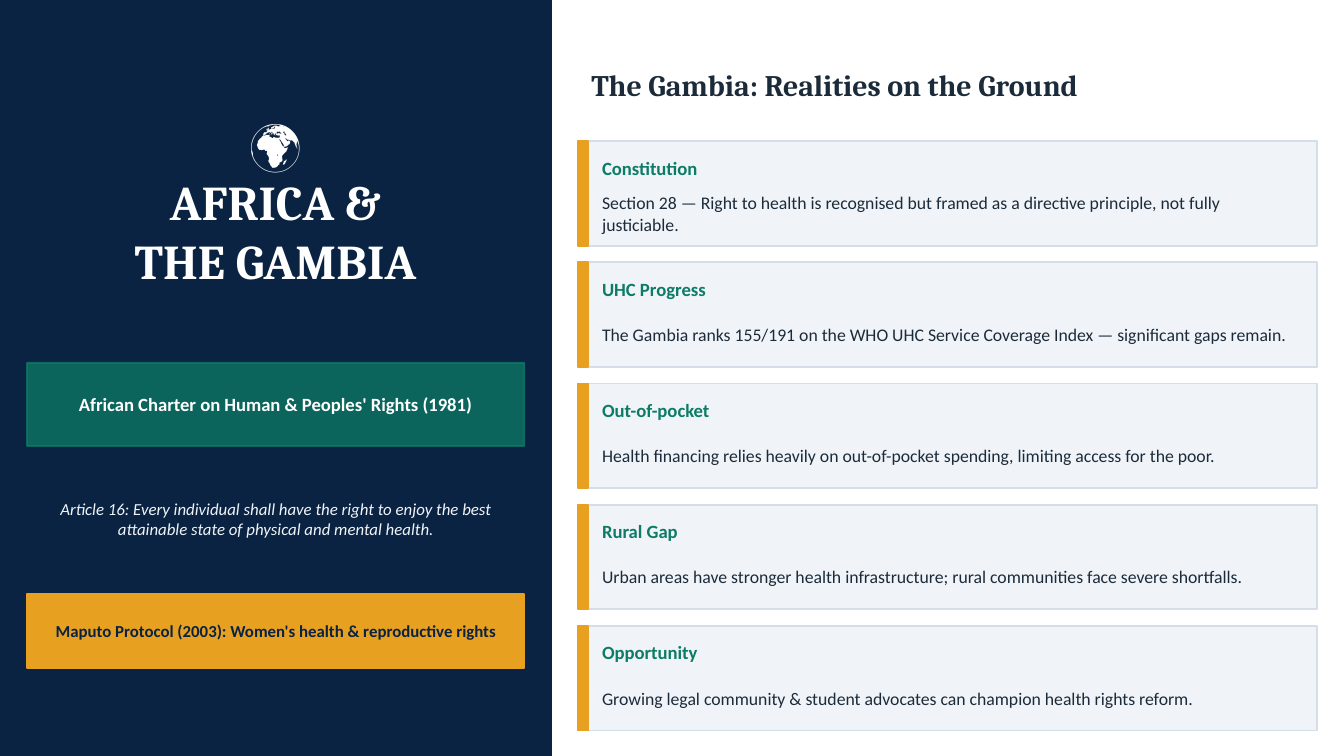
from lxml import etree
from pptx import Presentation
from pptx.dml.color import RGBColor
from pptx.enum.shapes import MSO_SHAPE
from pptx.enum.text import MSO_ANCHOR, MSO_AUTO_SIZE, PP_ALIGN
from pptx.oxml.ns import qn
from pptx.util import Cm, Pt

RECT = MSO_SHAPE.RECTANGLE
MIDDLE = MSO_ANCHOR.MIDDLE
NO_FIT = MSO_AUTO_SIZE.NONE
LEFT, CENTER = PP_ALIGN.LEFT, PP_ALIGN.CENTER

NAVY = RGBColor(0x0A, 0x23, 0x42)
GREEN = RGBColor(0x0D, 0x7C, 0x66)
GOLD = RGBColor(0xE8, 0xA0, 0x20)
PALE = RGBColor(0xF0, 0xF4, 0xF8)
EDGE = RGBColor(0xD4, 0xDD, 0xE8)
INK = RGBColor(0x1C, 0x2B, 0x3A)
WHITE = RGBColor(0xFF, 0xFF, 0xFF)

# Font formats
HERO = {"name": "Cambria", "size": Pt(26), "bold": True}
TITLE = {"name": "Cambria", "size": Pt(16), "bold": True}
HEAD = {"name": "Calibri", "size": Pt(10), "bold": True}
BODY = {"name": "Calibri", "size": Pt(9.5)}
QUOTE = {"name": "Calibri", "size": Pt(9), "italic": True}
NOTE = {"name": "Calibri", "size": Pt(9), "bold": True}

CARDS = [
    ("Constitution", "Section 28 — Right to health is recognised but framed "
     "as a directive principle, not fully justiciable."),
    ("UHC Progress", "The Gambia ranks 155/191 on the WHO UHC Service "
     "Coverage Index — significant gaps remain."),
    ("Out-of-pocket", "Health financing relies heavily on out-of-pocket "
     "spending, limiting access for the poor."),
    ("Rural Gap", "Urban areas have stronger health infrastructure; rural "
     "communities face severe shortfalls."),
    ("Opportunity", "Growing legal community & student advocates can "
     "champion health rights reform."),
]
CARD_X, CARD_TOP, CARD_STEP = 10.92, 2.67, 2.29
CARD_W, CARD_H = 13.97, 1.98


def fade(shape, alpha):
    """Give the fill and line an opacity in percent."""
    for color in shape._element.spPr.iter(qn("a:srgbClr")):
        etree.SubElement(color, qn("a:alpha")).set("val", str(alpha * 1000))


def add_rect(slide, box, fill, line):
    shape = slide.shapes.add_shape(RECT, *map(Cm, box))
    shape.shadow.inherit = False
    shape.fill.solid()
    shape.fill.fore_color.rgb = fill
    shape.line.color.rgb = line
    shape.line.width = Pt(1)
    return shape


def set_text(frame, text, style, color, align):
    frame.text = text
    frame.word_wrap = True
    frame.auto_size = NO_FIT
    frame.vertical_anchor = MIDDLE
    for para in frame.paragraphs:
        para.alignment = align
        for run in para.runs:
            for key, value in style.items():
                setattr(run.font, key, value)
            run.font.color.rgb = color


def add_text(slide, box, text, style, color, align=LEFT, inset=False):
    frame = slide.shapes.add_textbox(*map(Cm, box)).text_frame
    if not inset:
        for side in ("left", "top", "right", "bottom"):
            setattr(frame, f"margin_{side}", 0)
    set_text(frame, text, style, color, align)


def add_title(slide, box, text):
    title = slide.shapes.title
    for key, value in zip(("left", "top", "width", "height"), box):
        setattr(title, key, Cm(value))
    set_text(title.text_frame, text, TITLE, INK, LEFT)


def add_card(slide, top, head, body):
    add_rect(slide, (CARD_X, top, CARD_W, CARD_H), PALE, EDGE)
    add_rect(slide, (CARD_X, top, 0.2, CARD_H), GOLD, GOLD)
    left = CARD_X + 0.46
    add_text(slide, (left, top + 0.15, 3.43, 0.71), head, HEAD, GREEN)
    add_text(slide, (left, top + 0.91, 13.21, 0.91), body, BODY, INK)


def add_panel(slide):
    add_rect(slide, (0, 0, 10.41, 14.29), NAVY, NAVY)
    add_text(slide, (0.51, 1.27, 9.4, 5.08), "🌍\nAFRICA &\nTHE GAMBIA",
             HERO, WHITE, CENTER, inset=True)

    # Charter and its article
    fade(add_rect(slide, (0.51, 6.86, 9.4, 1.57), GREEN, GREEN), 75)
    add_text(slide, (0.76, 6.91, 8.89, 1.47),
             "African Charter on Human & Peoples' Rights (1981)",
             HEAD, WHITE, CENTER)
    add_text(slide, (0.64, 8.69, 9.14, 2.24),
             "Article 16: Every individual shall have the right to enjoy the "
             "best attainable state of physical and mental health.",
             QUOTE, PALE, CENTER, inset=True)

    # Protocol
    add_rect(slide, (0.51, 11.23, 9.4, 1.4), GOLD, GOLD)
    add_text(slide, (0.64, 11.28, 9.14, 1.27),
             "Maputo Protocol (2003): Women's health & reproductive rights",
             NOTE, NAVY, CENTER)


def main():
    deck = Presentation()
    deck.slide_width, deck.slide_height = Cm(25.4), Cm(14.29)
    slide = deck.slides.add_slide(deck.slide_layouts[5])

    # Left panel
    add_panel(slide)

    # Right side: title and cards
    add_title(slide, (CARD_X, 0.89, CARD_W, 1.4),
              "The Gambia: Realities on the Ground")
    for i, (head, body) in enumerate(CARDS):
        add_card(slide, CARD_TOP + i * CARD_STEP, head, body)

    deck.save("out.pptx")


if __name__ == "__main__":
    main()
